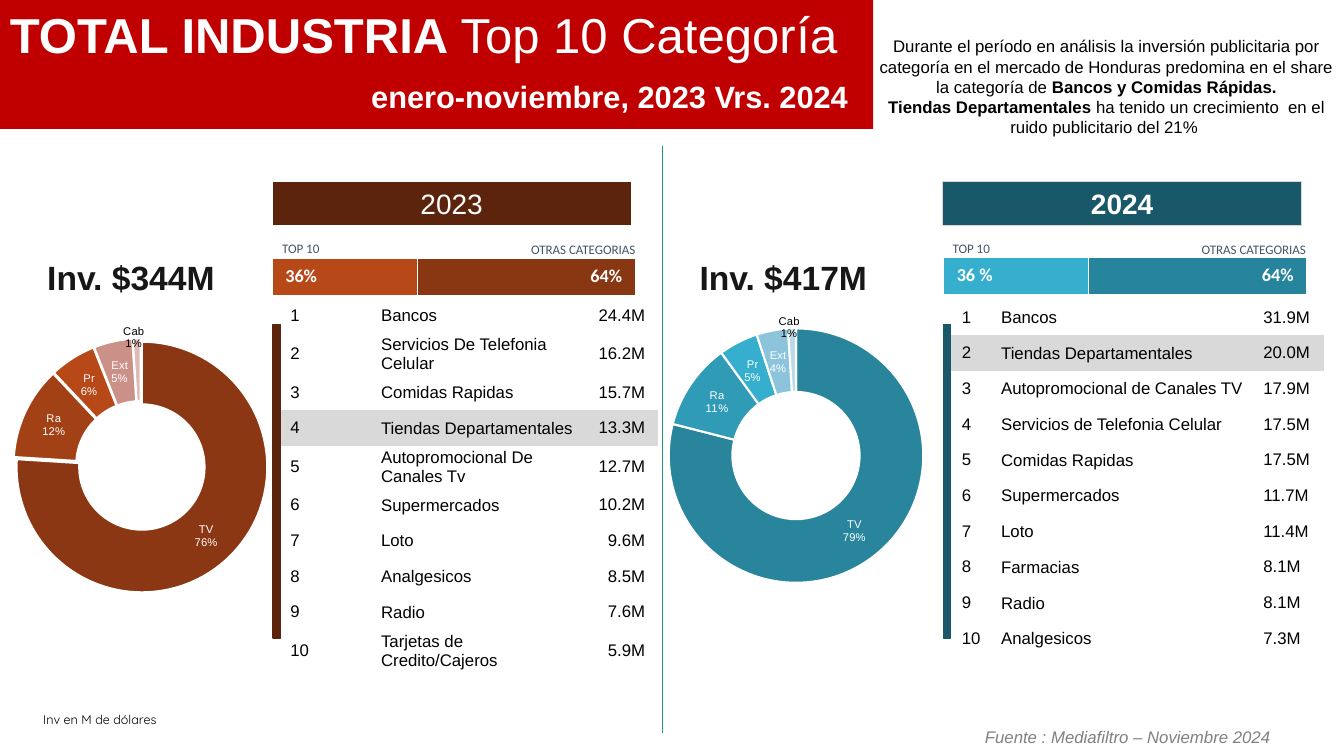
from lxml.etree import SubElement
from pptx import Presentation
from pptx.chart.data import CategoryChartData
from pptx.dml.color import RGBColor
from pptx.enum.chart import XL_CHART_TYPE
from pptx.enum.shapes import MSO_CONNECTOR, MSO_SHAPE
from pptx.enum.text import MSO_ANCHOR, MSO_AUTO_SIZE, PP_ALIGN
from pptx.oxml import parse_xml
from pptx.oxml.ns import nsdecls, qn
from pptx.util import Inches, Pt

COLORS = {
    "red": "C00000", "white": "FFFFFF", "black": "000000", "ink": "181717", "slate": "44546A",
    "gray": "808080", "highlight": "D9D9D9", "divider": "1D9A78", "brown": "5C240C", "teal": "195869",
}
NO_STYLE_TABLE = "{2D5ABB26-0587-4C30-8999-92F81FD0307C}"
MEDIA = ["TV", "Ra", "Pr", "Ext", "Cab"]
PANELS = [
    {
        "year": "2023", "bold_year": False, "dark": "brown", "edge": "white", "left": 2.7,
        "share_box": (2.7, 2.56), "shares": ("36%", "64%"), "share_fills": ("B74919", "893713"),
        "investment": "Inv. $344M", "investment_left": 0.37, "others_left": 4.73,
        "chart_box": (-0.5, 3.22, 3.79, 2.8), "values": (76, 12, 6, 5, 1), "explosion": 3,
        "slices": ("8B3713", "A24116", "B74919", "CB9188", "DCBBB6"),
        "ranking_box": (2.75, 2.95), "columns": (0.52, 2.52, 0.74), "indent": 0.5,
        "amount_align": PP_ALIGN.RIGHT, "highlighted": 4,
        "ranking": [
            ("Bancos", "24.4M"), ("Servicios De Telefonia Celular", "16.2M"),
            ("Comidas Rapidas", "15.7M"), ("Tiendas Departamentales", "13.3M"),
            ("Autopromocional De Canales Tv", "12.7M"), ("Supermercados", "10.2M"),
            ("Loto", "9.6M"), ("Analgesicos", "8.5M"), ("Radio", "7.6M"),
            ("Tarjetas de Credito/Cajeros", "5.9M"),
        ],
    },
    {
        "year": "2024", "bold_year": True, "dark": "teal", "edge": "highlight", "left": 9.35,
        "share_box": (9.36, 2.55), "shares": ("36 %", "64%"), "share_fills": ("36AFCE", "26859D"),
        "investment": "Inv. $417M", "investment_left": 6.84, "others_left": 11.38,
        "chart_box": (6, 3.12, 3.79, 2.8), "values": (79, 11, 5, 4, 1), "explosion": 0,
        "slices": ("29859C", "309BB7", "36AFCE", "8CC5DB", "B9D9E6"),
        "ranking_box": (9.41, 2.97), "columns": (0.51, 2.48, 0.73), "indent": 0,
        "amount_align": PP_ALIGN.LEFT, "highlighted": 2,
        "ranking": [
            ("Bancos", "31.9M"), ("Tiendas Departamentales", "20.0M"),
            ("Autopromocional de Canales TV", "17.9M"), ("Servicios de Telefonia Celular", "17.5M"),
            ("Comidas Rapidas", "17.5M"), ("Supermercados", "11.7M"), ("Loto", "11.4M"),
            ("Farmacias", "8.1M"), ("Radio", "8.1M"), ("Analgesicos", "7.3M"),
        ],
    },
]


def rgb(color):
    """Return the colour for a palette name or a hex string."""
    return RGBColor.from_string(COLORS.get(color, color))


def style_font(font, color, **values):
    """Set colour and the given values on a font."""
    for name, value in {"name": "Arial", **values}.items():
        setattr(font, name, value)
    font.color.rgb = rgb(color)


def write(paragraph, runs, color, align=PP_ALIGN.LEFT, **values):
    """Fill a paragraph with (text, overrides) runs."""
    paragraph.alignment = align
    for text, overrides in runs:
        run = paragraph.add_run()
        run.text = text
        style_font(run.font, color, **{**values, **overrides})


def add_text(slide, box, paragraphs, color, wrap=True, **values):
    """Add a text box holding a list of paragraphs."""
    frame = slide.shapes.add_textbox(*map(Inches, box)).text_frame
    frame.word_wrap = wrap
    frame.auto_size = MSO_AUTO_SIZE.SHAPE_TO_FIT_TEXT
    for index, runs in enumerate(paragraphs):
        paragraph = frame.add_paragraph() if index else frame.paragraphs[0]
        write(paragraph, runs, color, **values)


def add_rectangle(slide, box, fill, line=None, width=1):
    """Add a flat rectangle and return it."""
    shape = slide.shapes.add_shape(MSO_SHAPE.RECTANGLE, *map(Inches, box))
    shape.shadow.inherit = False
    shape.fill.solid()
    shape.fill.fore_color.rgb = rgb(fill)
    if line:
        shape.line.color.rgb = rgb(line)
        shape.line.width = Pt(width)
    else:
        shape.line.fill.background()
    return shape


def add_table(slide, position, columns, row_count, height):
    """Add an unstyled table with the given column widths."""
    box = (*position, sum(columns), height)
    table = slide.shapes.add_table(row_count, len(columns), *map(Inches, box)).table
    table.first_row = table.horz_banding = False
    table._tbl.tblPr.find(qn("a:tableStyleId")).text = NO_STYLE_TABLE
    for column, width in zip(table.columns, columns):
        column.width = Inches(width)
    return table


def fill_cell(cell, text, color, fill=None, margins=(0.13, 0.07, 0.13, 0.07), **values):
    """Write a cell's text and set its margins and fill."""
    for side, margin in zip(("left", "top", "right", "bottom"), margins):
        setattr(cell, f"margin_{side}", Inches(margin))
    if fill:
        cell.fill.solid()
        cell.fill.fore_color.rgb = rgb(fill)
    else:
        cell.fill.background()
    write(cell.text_frame.paragraphs[0], [(text, {})], color, **values)


def add_cell_borders(cell, widths):
    """Draw white borders with widths in points by side."""
    properties = cell._tc.get_or_add_tcPr()
    for index, (side, width) in enumerate(widths.items()):
        properties.insert(index, parse_xml(
            f'<a:ln{side} {nsdecls("a")} w="{Pt(width)}"><a:solidFill>'
            f'<a:srgbClr val="{COLORS["white"]}"/></a:solidFill></a:ln{side}>'))


def add_share_bar(slide, panel):
    """Add the bar that splits top 10 and other categories."""
    table = add_table(slide, panel["share_box"], (1.44, 2.16), 1, 0.39)
    aligns = (PP_ALIGN.LEFT, PP_ALIGN.RIGHT)
    for cell, text, fill, align in zip(table.rows[0].cells, panel["shares"], panel["share_fills"], aligns):
        fill_cell(cell, text, "white", fill, align=align, name="Calibri", size=Pt(13), bold=True)
        add_cell_borders(cell, {"L": 1, "R": 1, "T": 1, "B": 3})


def add_ranking(slide, panel):
    """Add the table of the ten leading categories."""
    ranking = panel["ranking"]
    table = add_table(slide, panel["ranking_box"], panel["columns"], len(ranking), 3.54)
    for rank, (category, amount) in enumerate(ranking, 1):
        fill = "highlight" if rank == panel["highlighted"] else None
        number, name, value = table.rows[rank - 1].cells
        fill_cell(number, str(rank), "black", fill, size=Pt(12))
        fill_cell(name, category, "black", fill, (0.01, 0.01, 0.01, 0), size=Pt(12))
        fill_cell(value, amount, "black", fill, align=panel["amount_align"], size=Pt(12))
        name.text_frame.paragraphs[0]._p.get_or_add_pPr().set("marL", str(Inches(panel["indent"])))
        for cell in (number, name, value):
            cell.vertical_anchor = MSO_ANCHOR.MIDDLE


def show_name_and_percent(labels):
    """Show category name above percentage in a labels element."""
    for tag, shown in {"showVal": 0, "showCatName": 1, "showPercent": 1}.items():
        labels.find(qn(f"c:{tag}")).set("val", str(shown))
    separator = parse_xml(f'<c:separator {nsdecls("c")}>\n</c:separator>')
    previous = labels.find(qn("c:showBubbleSize"))
    if previous is None:
        previous = labels.find(qn("c:showPercent"))
    previous.addnext(separator)


def add_doughnut(slide, panel):
    """Add the doughnut of investment by medium."""
    data = CategoryChartData()
    data.categories = MEDIA
    data.add_series("Series 1", panel["values"])
    box = map(Inches, panel["chart_box"])
    chart = slide.shapes.add_chart(XL_CHART_TYPE.DOUGHNUT, *box, data).chart
    chart.has_legend = chart.has_title = False
    style_font(chart.font, "black", size=Pt(10))
    plot = chart.plots[0]
    plot.vary_by_categories = True
    plot._element.find(qn("c:holeSize")).set("val", "50")
    series = plot.series[0]
    for index, color in enumerate(panel["slices"]):
        point = series.points[index].format
        point.fill.solid()
        point.fill.fore_color.rgb = rgb(color)
        point.line.color.rgb = rgb("white")
        point.line.width = Pt(1.5)
    if panel["explosion"]:
        for point in series._element.findall(qn("c:dPt")):
            explosion = SubElement(point, qn("c:explosion"), val=str(panel["explosion"]))
            point.find(qn("c:spPr")).addprevious(explosion)
    labels = series.data_labels
    style_font(labels.font, "white", size=Pt(8))
    labels.number_format, labels.number_format_is_linked = "0%", False
    show_name_and_percent(labels._element)
    style_font(series.points[len(MEDIA) - 1].data_label.font, "black", size=Pt(8))
    cable = labels._element.find(qn("c:dLbl"))
    show_name_and_percent(cable)
    cable.find(qn("c:idx")).addnext(parse_xml(
        f'<c:layout {nsdecls("c")}><c:manualLayout><c:x val="-0.01"/><c:y val="-0.12"/>'
        '</c:manualLayout></c:layout>'))


def add_panel(slide, panel):
    """Add everything that belongs to one year."""
    left, dark = panel["left"], panel["dark"]
    header = add_rectangle(slide, (left, 1.8, 3.56, 0.44), dark, panel["edge"], 0.75)
    write(header.text_frame.paragraphs[0], [(panel["year"], {})], "white", PP_ALIGN.CENTER,
          size=Pt(20), bold=panel["bold_year"])
    caption = {"name": "Calibri", "size": Pt(9.3)}
    add_text(slide, (left, 2.34, 1.18, 0.26), [[("TOP 10", {})]], "slate", **caption)
    add_text(slide, (panel["others_left"], 2.35, 1.67, 0.26), [[("OTRAS CATEGORIAS", {})]], "slate",
             align=PP_ALIGN.RIGHT, **caption)
    add_share_bar(slide, panel)
    add_ranking(slide, panel)
    add_rectangle(slide, (left + 0.01, 3.22, 0.07, 3.11), dark, dark)
    add_doughnut(slide, panel)
    add_text(slide, (panel["investment_left"], 2.5, 1.87, 0.5), [[(panel["investment"], {})]], "ink",
             wrap=False, size=Pt(24), bold=True)


def add_banner(slide):
    """Add the red title banner with its subtitle."""
    frame = add_rectangle(slide, (0, -0.02, 8.66, 1.3), "red").text_frame
    frame.vertical_anchor = MSO_ANCHOR.TOP
    write(frame.paragraphs[0], [("TOTAL INDUSTRIA ", {"bold": True}), ("Top 10 Categor", {}),
                                ("í", {"size": Pt(36)}), ("a", {})], "white", size=Pt(35), bold=False)
    add_text(slide, (3.29, 0.72, 5.22, 0.47), [[("enero-noviembre, 2023 Vrs. 2024", {})]], "white",
             align=PP_ALIGN.RIGHT, size=Pt(22), bold=True)


def add_divider(slide):
    """Add the vertical line between the two years."""
    ends = map(Inches, (6.57, 1.45, 6.57, 7.27))
    divider = slide.shapes.add_connector(MSO_CONNECTOR.STRAIGHT, *ends)
    divider.line.color.rgb = rgb("divider")
    divider.line.width = Pt(0.5)
    SubElement(divider._element.spPr, qn("a:effectLst"))


def main():
    """Build and save the slide."""
    presentation = Presentation()
    presentation.slide_width, presentation.slide_height = Inches(13.33), Inches(7.5)
    slide = presentation.slides.add_slide(presentation.slide_layouts[6])
    strong = {"bold": True}
    add_text(slide, (8.62, 0.31, 4.71, 1.11), [
        [("Durante el período en análisis la inversión publicitaria por categoría en el mercado de "
          "Honduras predomina en el share la categoría de ", {}), ("Bancos y Comidas Rápidas.", strong)],
        [("Tiendas Departamentales ", strong),
         ("ha tenido un crecimiento  en el ruido publicitario del 21% ", {})],
    ], "black", align=PP_ALIGN.CENTER, size=Pt(12))
    add_banner(slide)
    for panel in PANELS:
        add_panel(slide, panel)
    add_divider(slide)
    add_text(slide, (0.33, 7.01, 1.69, 0.25), [[("Inv en M de dólares", {})]], "black",
             name="Quicksand", size=Pt(9))
    add_text(slide, (9.67, 7.16, 3.3, 0.3), [[("Fuente : Mediafiltro – Noviembre 2024", {})]], "gray",
             size=Pt(12), italic=True)
    presentation.save("out.pptx")


if __name__ == "__main__":
    main()
